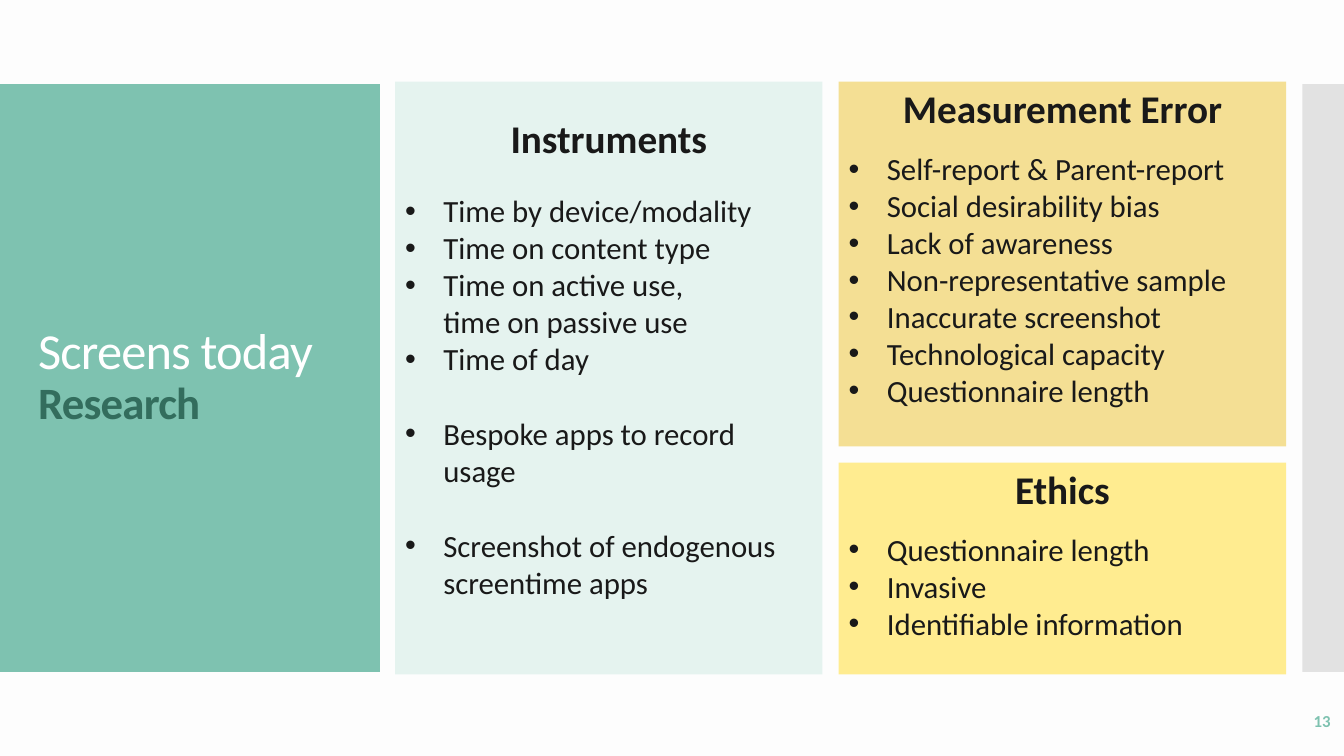
from lxml.etree import SubElement
from pptx import Presentation
from pptx.dml.color import RGBColor
from pptx.enum.shapes import MSO_SHAPE
from pptx.enum.text import MSO_ANCHOR, PP_ALIGN
from pptx.oxml.ns import qn
from pptx.util import Inches, Pt

COLORS = {
    "background": "FDFDFD",
    "green": "7EC2B0",
    "dark_green": "336D5D",
    "mint": "E5F3EF",
    "sand": "F4DF94",
    "yellow": "FFEC90",
    "gray": "C8C8C8",
    "ink": "191919",
    "white": "FFFFFF",
}
COLUMNS, ROWS = 160, 90
GAP = 1.92


def color(name):
    return RGBColor.from_string(COLORS[name])


def write(paragraph, text, size=22, ink="ink", bold=False, spacing=None):
    for index, line in enumerate(text.split("\n")):
        if index:
            paragraph.add_line_break()
        run = paragraph.add_run()
        run.text = line
        run.font.name = "Calibri"
        run.font.size = Pt(size)
        run.font.bold = bold
        run.font.color.rgb = color(ink)
        if spacing is not None:
            run._r.get_or_add_rPr().set("spc", str(spacing))


class ScreensSlide:
    def __init__(self, presentation):
        self.width = presentation.slide_width
        self.height = presentation.slide_height
        self.slide = presentation.slides.add_slide(presentation.slide_layouts[6])
        fill = self.slide.background.fill
        fill.solid()
        fill.fore_color.rgb = color("background")

    def place(self, left, top, columns, rows):
        column, row = self.width / COLUMNS, self.height / ROWS
        return [round(value) for value in (left * column, top * row, columns * column, rows * row)]

    def block(self, area, fill, opacity=None):
        shape = self.slide.shapes.add_shape(MSO_SHAPE.RECTANGLE, *self.place(*area))
        shape.shadow.inherit = False
        shape.line.fill.background()
        shape.fill.solid()
        shape.fill.fore_color.rgb = color(fill)
        if opacity is not None:
            fill_color = shape._element.spPr.find(".//" + qn("a:srgbClr"))
            SubElement(fill_color, qn("a:alpha")).set("val", str(opacity * 1000))
        return shape

    def label(self, area):
        frame = self.slide.shapes.add_textbox(*self.place(*area)).text_frame
        frame.word_wrap = True
        frame.vertical_anchor = MSO_ANCHOR.MIDDLE
        return frame.paragraphs[0]

    def bullet(self, paragraph, text):
        paragraph.alignment = PP_ALIGN.LEFT
        properties = paragraph._p.get_or_add_pPr()
        properties.set("marL", str(Inches(0.38)))
        properties.set("indent", str(-Inches(0.38)))
        SubElement(properties, qn("a:buFont")).set("typeface", "Arial")
        SubElement(properties, qn("a:buChar")).set("char", "•")
        write(paragraph, text)

    def panel(self, area, fill, heading, groups, heading_gap, bottom):
        frame = self.block(area, fill).text_frame
        frame.word_wrap = True
        frame.vertical_anchor = MSO_ANCHOR.MIDDLE
        frame.margin_top = 0
        frame.margin_bottom = Inches(bottom)
        paragraph = frame.paragraphs[0]
        paragraph.alignment = PP_ALIGN.CENTER
        paragraph.space_after = Pt(heading_gap)
        write(paragraph, heading, size=28, bold=True)
        for index, group in enumerate(groups):
            for position, item in enumerate(group):
                paragraph = frame.add_paragraph()
                if index and not position:
                    paragraph.space_before = Pt(27)
                self.bullet(paragraph, item)


def main():
    presentation = Presentation()
    presentation.slide_width = Inches(13.33)
    presentation.slide_height = Inches(7.5)
    page = ScreensSlide(presentation)

    top, height = 9.72, 70.56
    left, left_width = 47.04, 50.88
    right, right_width = left + left_width + GAP, 53.28
    error_height = 43.44
    ethics_top = top + error_height + GAP
    edge = right + right_width + GAP

    page.block((0, 10, 45.24, 70), "green")
    page.block((edge, 10, COLUMNS - edge, 70), "gray", opacity=50)

    title = page.label((3.36, 14.76, 38.64, 60.36))
    title.line_spacing = 0.9
    write(title, "Screens today", size=36, ink="white", spacing=-60)
    title.add_line_break()
    write(title, "Research", size=32, ink="dark_green", bold=True, spacing=-60)

    number = page.label((139.6, 83.4, 20, 4.8))
    number.alignment = PP_ALIGN.RIGHT
    number.space_after = Pt(6)
    write(number, "13", size=12, ink="green", bold=True)

    page.panel(
        (left, top, left_width, height), "mint", "Instruments",
        [
            ["Time by device/modality", "Time on content type",
             "Time on active use,\ntime on passive use", "Time of day"],
            ["Bespoke apps to record usage"],
            ["Screenshot of endogenous screentime apps"],
        ],
        heading_gap=22, bottom=0.41,
    )
    page.panel(
        (right, ethics_top, right_width, top + height - ethics_top), "yellow", "Ethics",
        [["Questionnaire length", "Invasive", "Identifiable information"]],
        heading_gap=13.4, bottom=0.3,
    )
    page.panel(
        (right, top, right_width, error_height), "sand", "Measurement Error",
        [["Self-report & Parent-report", "Social desirability bias", "Lack of awareness",
          "Non-representative sample", "Inaccurate screenshot", "Technological capacity",
          "Questionnaire length"]],
        heading_gap=13.4, bottom=0.35,
    )
    presentation.save("out.pptx")


if __name__ == "__main__":
    main()
